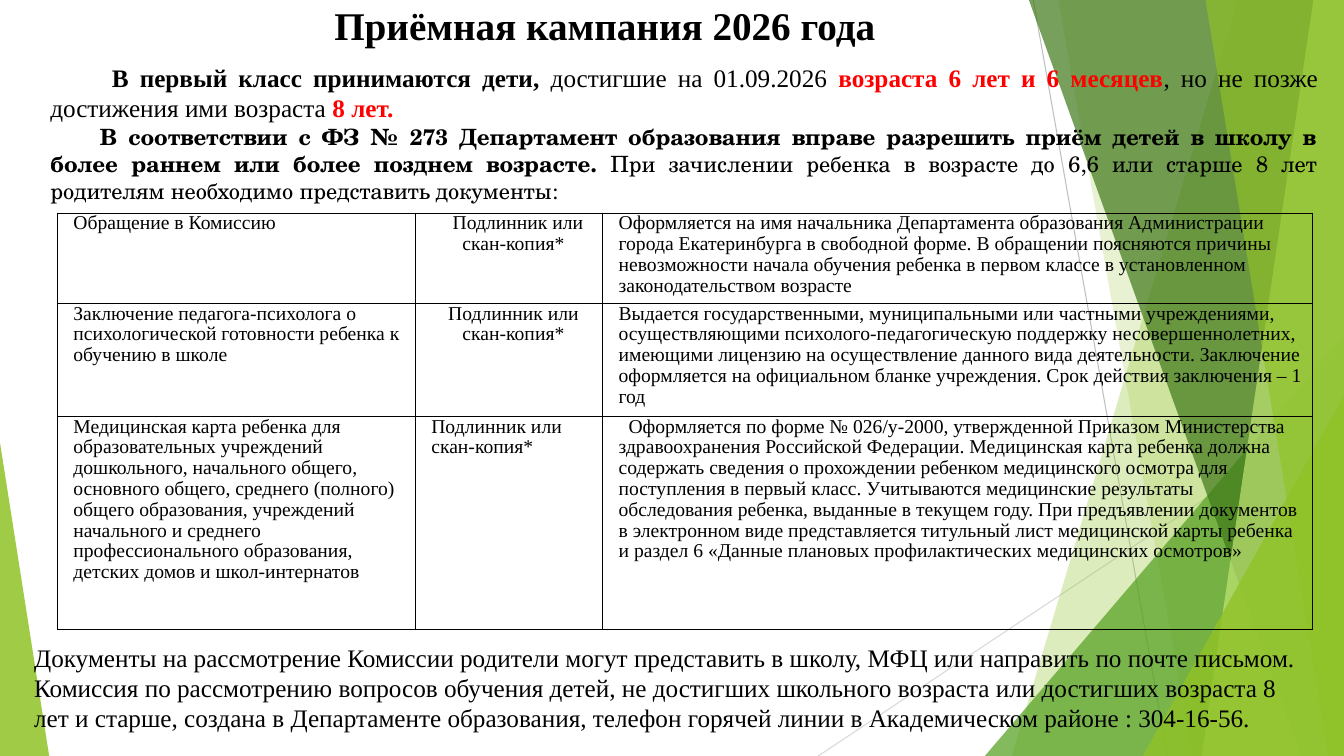
from dataclasses import dataclass

from lxml.etree import SubElement
from pptx import Presentation
from pptx.dml.color import RGBColor
from pptx.enum.shapes import MSO_CONNECTOR, MSO_SHAPE
from pptx.enum.text import MSO_ANCHOR, MSO_AUTO_SIZE, PP_ALIGN
from pptx.oxml import parse_xml
from pptx.oxml.ns import nsdecls, qn
from pptx.util import Cm, Pt


@dataclass(frozen=True)
class Theme:
    ink: str = "000000"
    alert: str = "FF0000"
    lime: str = "90C226"
    pale: str = "C0E474"
    green: str = "54A021"
    dark: str = "3F7819"
    gray: str = "BFBFBF"
    mist: str = "D9D9D9"
    serif: str = "Times New Roman"
    school: str = "TeX Gyre Schola"
    title: int = 28
    body: int = 18
    rule: int = 16
    cell: int = 14


theme = Theme()


def style(run, size, bold=False, color=theme.ink, face=theme.serif):
    run.font.size = Pt(size)
    run.font.bold = bold
    run.font.name = face
    run.font.color.rgb = RGBColor.from_string(color)


def indent(para, first):
    """Set the first-line indent in centimetres."""
    props = para._p.get_or_add_pPr()
    props.set("marL", "0")
    props.set("indent", str(Cm(first)))


deck = Presentation()
deck.slide_width, deck.slide_height = Cm(33.87), Cm(19.05)
wide, high = deck.slide_width, deck.slide_height
slide = deck.slides.add_slide(deck.slide_layouts[5])
shapes = slide.shapes

# Thin lines behind the green facets
for x1, y1, x2, y2, color in [
    (26.04, 0, 29.42, 19.05, theme.gray),
    (33.87, 10.24, 20.62, 19.05, theme.mist),
]:
    line = shapes.add_connector(
        MSO_CONNECTOR.STRAIGHT, Cm(x1), Cm(y1), Cm(x2), Cm(y2))
    line.line.width = Pt(0.75)
    line.line.color.rgb = RGBColor.from_string(color)
    SubElement(line._element.spPr, qn("a:effectLst"))

# Strips: x at the top and foot, reaching the right edge.
# Triangles: left, top, width and peak, standing on the bottom edge.
facets = [
    ((31.19, 25.5), theme.lime, 30),
    ((26.67, 30.05), theme.lime, 20),
    ((24.82, 8.46, 9.05, 1), theme.green, 72),
    ((25.93, 32.79), theme.dark, 70),
    ((33.1, 30.28), theme.pale, 70),
    ((30.38, 33.48), theme.lime, 65),
    ((28.8, 9.98, 5.07, 1), theme.lime, 80),
    ((0, 11.15, 1.24, 0), theme.lime, 85),
]
for form, color, alpha in facets:
    if len(form) == 2:
        top, foot = map(Cm, form)
        path = shapes.build_freeform(top, 0)
        path.add_line_segments([(wide, 0), (wide, high), (foot, high)])
        facet = path.convert_to_shape()
    else:
        left, top, width = map(Cm, form[:3])
        facet = shapes.add_shape(
            MSO_SHAPE.ISOSCELES_TRIANGLE, left, top, width, high - top)
        facet.adjustments[0] = form[3]
    facet.shadow.inherit = False
    facet.line.fill.background()
    facet.fill.solid()
    facet.fill.fore_color.rgb = RGBColor.from_string(color)
    tint = facet._element.spPr.find(qn("a:solidFill"))[0]
    SubElement(tint, qn("a:alpha")).set("val", str(alpha * 1000))

# Title
title = shapes.title
title.left, title.top, title.width, title.height = (
    Cm(0), Cm(-0.1), Cm(30.48), Cm(1.07))
frame = title.text_frame
frame.text = "Приёмная кампания 2026 года"
frame.vertical_anchor = MSO_ANCHOR.TOP
frame.auto_size = MSO_AUTO_SIZE.NONE
frame.paragraphs[0].alignment = PP_ALIGN.CENTER
style(frame.paragraphs[0].runs[0], theme.title, True)

# Rules of entry
rules = [
    (1.55, theme.body, theme.serif, [
        ("В первый класс принимаются дети,", True, theme.ink),
        (" достигшие на 01.09.2026 ", False, theme.ink),
        ("возраста 6 лет и 6 месяцев", True, theme.alert),
        (", но не позже достижения ими возраста ", False, theme.ink),
        ("8 лет.", True, theme.alert),
    ]),
    (1.25, theme.rule, theme.school, [
        ("В соответствии с ФЗ № 273 Департамент образования вправе разрешить "
         "приём детей в школу в более раннем или более позднем возрасте.",
         True, theme.ink),
        (" При зачислении ребенка в возрасте до 6,6 или старше 8 лет "
         "родителям необходимо представить документы:", False, theme.ink),
    ]),
]
frame = shapes.add_textbox(Cm(1.02), Cm(1.45), Cm(32.44), Cm(4.5)).text_frame
frame.word_wrap = True
for i, (first, size, face, parts) in enumerate(rules):
    para = frame.add_paragraph() if i else frame.paragraphs[0]
    para.alignment = PP_ALIGN.JUSTIFY
    indent(para, first)
    for text, bold, color in parts:
        run = para.add_run()
        run.text = text
        style(run, size, bold, color, face)

# Papers to hand in
copy = "Подлинник или скан-копия*"
papers = [
    ("Обращение в Комиссию", copy,
     "Оформляется на имя начальника Департамента образования Администрации "
     "города Екатеринбурга в свободной форме. В обращении поясняются причины "
     "невозможности начала обучения ребенка в первом классе в установленном "
     "законодательством возрасте"),
    ("Заключение педагога-психолога о психологической готовности ребенка к "
     "обучению в школе", copy,
     "Выдается государственными, муниципальными или частными учреждениями, "
     "осуществляющими психолого-педагогическую поддержку "
     "несовершеннолетних, имеющими лицензию на осуществление данного вида "
     "деятельности. Заключение оформляется на официальном бланке "
     "учреждения. Срок действия заключения – 1 год"),
    ("Медицинская карта ребенка для образовательных учреждений дошкольного, "
     "начального общего, основного общего, среднего (полного) общего "
     "образования, учреждений начального и среднего профессионального "
     "образования, детских домов и школ-интернатов", copy,
     "Оформляется по форме № 026/у-2000, утвержденной Приказом Министерства "
     "здравоохранения Российской Федерации. Медицинская карта ребенка должна "
     "содержать сведения о прохождении ребенком медицинского осмотра для "
     "поступления в первый класс. Учитываются медицинские результаты "
     "обследования ребенка, выданные в текущем году. При предъявлении "
     "документов в электронном виде представляется титульный лист "
     "медицинской карты ребенка и раздел 6 «Данные плановых "
     "профилактических медицинских осмотров»"),
]
firsts = {(0, 1): 0.23, (2, 2): 0.25}
table = shapes.add_table(
    3, 3, Cm(1.45), Cm(5.37), Cm(31.62), Cm(10.4)).table
table.first_row = table.horz_banding = False
for col, width in zip(table.columns, (9.02, 4.72, 17.88)):
    col.width = Cm(width)
for row, height in zip(table.rows, (2.2, 2.84, 5.36)):
    row.height = Cm(height)
for r, texts in enumerate(papers):
    for c, text in enumerate(texts):
        cell = table.cell(r, c)
        cell.text_frame.text = text
        cell.margin_left, cell.margin_right = Cm(0.4), Cm(0.18)
        cell.margin_top = cell.margin_bottom = 0
        para = cell.text_frame.paragraphs[0]
        para.line_spacing = 0.96
        if c == 1 and r < 2:
            para.alignment = PP_ALIGN.CENTER
        indent(para, firsts.get((r, c), 0))
        style(para.runs[0], theme.cell)
        for side in "LRTB":
            cell._tc.get_or_add_tcPr().append(parse_xml(
                f'<a:ln{side} {nsdecls("a")} w="{Pt(1)}"><a:solidFill>'
                f'<a:srgbClr val="{theme.ink}"/></a:solidFill></a:ln{side}>'))
        cell.fill.background()

# Where to apply
frame = shapes.add_textbox(Cm(0.61), Cm(16.05), Cm(32.44), Cm(2.57)).text_frame
frame.word_wrap = True
frame.text = (
    "Документы на рассмотрение Комиссии родители могут представить в школу, "
    "МФЦ или направить по почте письмом. Комиссия по рассмотрению вопросов "
    "обучения детей, не достигших школьного возраста или достигших возраста "
    "8 лет и старше, создана в Департаменте образования, телефон горячей "
    "линии в Академическом районе : 304-16-56.")
style(frame.paragraphs[0].runs[0], theme.body)

deck.save("out.pptx")
